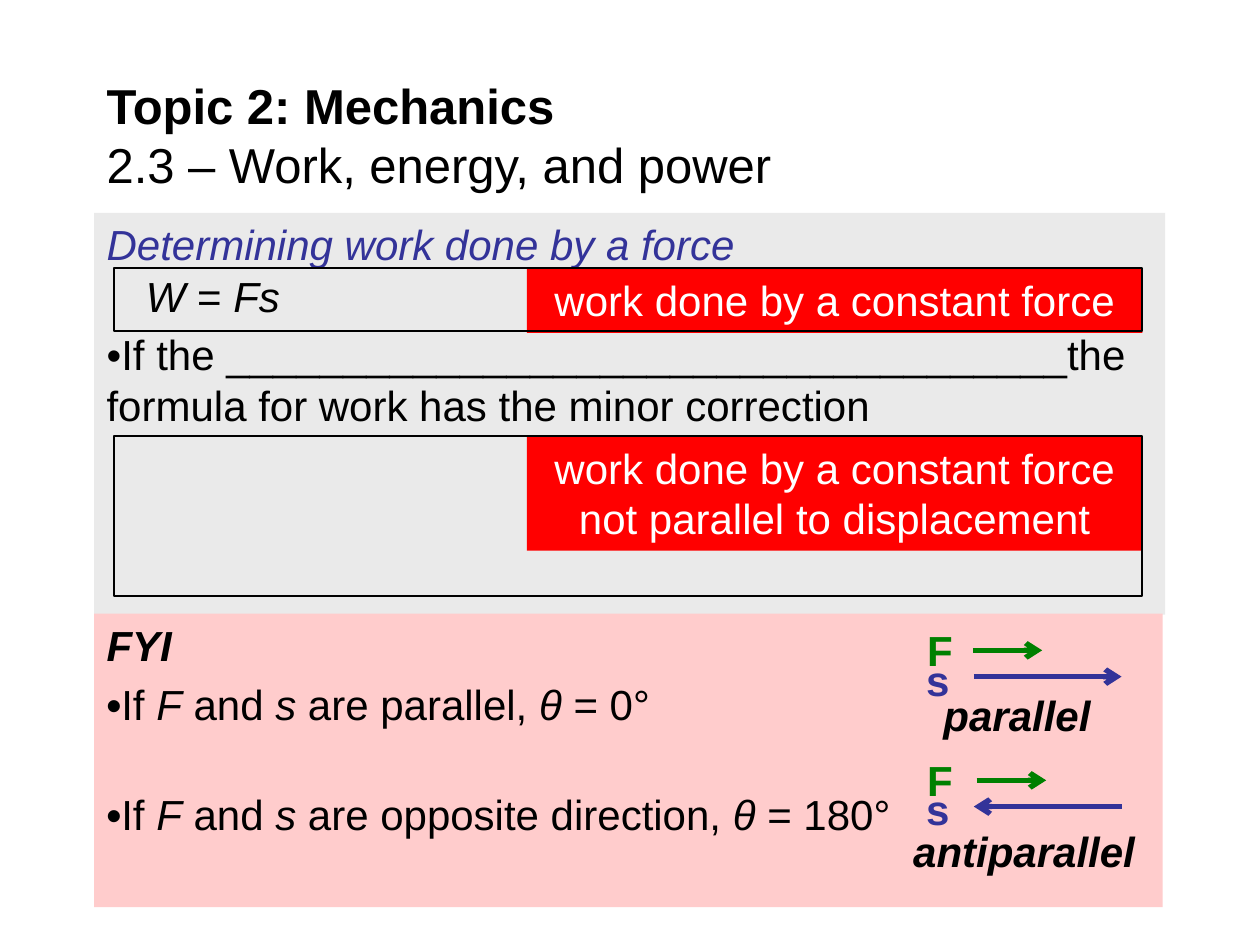
"""Build a physics slide on the work done by a constant force."""
from dataclasses import dataclass
from lxml.etree import SubElement
from pptx import Presentation
from pptx.dml.color import RGBColor as Rgb
from pptx.enum.shapes import MSO_CONNECTOR as Link, MSO_SHAPE as Preset
from pptx.enum.text import MSO_ANCHOR as Anchor, PP_ALIGN as Align
from pptx.oxml.ns import qn
from pptx.util import Cm, Pt


@dataclass(frozen=True)
class Theme:
    font: str = "Arial"
    title: int = 28
    body: int = 24
    gap: int = 5
    wide_gap: int = 34
    black: str = "000000"
    white: str = "FFFFFF"
    blue: str = "333399"
    green: str = "008000"
    red: str = "FF0000"
    gray: str = "EAEAEA"
    pink: str = "FFCCCC"


theme = Theme()

TITLE = [
    dict(spans=[("Topic 2: Mechanics", "b")], size=theme.title),
    dict(spans=[("2.3 – Work, energy, and power", "")], size=theme.title),
]
LESSON = [
    dict(spans=[("Determining work done by a force", "i")], color=theme.blue),
    dict(spans=[("•If the ____________________________________the formula for work "
                 "has the minor correction", "")], before=theme.wide_gap),
]
FYI = [
    dict(spans=[("FYI", "bi")]),
    dict(spans=[("•", "b"), ("If ", ""), ("F", "i"), (" and ", ""), ("s", "i"),
                (" are parallel, ", ""), ("θ", "i"), (" = 0°", "")], before=theme.gap),
    dict(spans=[("•", "b"), ("If ", ""), ("F", "i"), (" and ", ""), ("s", "i"),
                (" are opposite direction, ", ""), ("θ", "i"), (" = 180°", "")],
         before=theme.wide_gap),
]
FORMULA = [dict(spans=[("W", "i"), (" = ", ""), ("Fs", "i")], spacing=0.9)]
FORMULA_BOXES = [
    ("work done by a constant force not parallel to displacement", 8.79, 2.31, 3.23),
    ("work done by a constant force", 5.41, 1.3, 1.27),
]
FRAME_LEFT, LABEL_LEFT, FRAME_RIGHT = 2.3, 10.62, 23.03
DIAGRAMS = [
    dict(top=12.47, force_x=19.61, reverse=False, caption=("parallel", 18.77, 13.77, 3.51)),
    dict(top=15.09, force_x=19.69, reverse=True, caption=("antiparallel", 18.16, 16.51, 5.03)),
]


def write(box, paras, wrap=True, anchor=Anchor.TOP):
    frame = box.text_frame
    frame.word_wrap = wrap
    frame.vertical_anchor = anchor
    for index, item in enumerate(paras):
        para = frame.add_paragraph() if index else frame.paragraphs[0]
        para.alignment = item.get("align", Align.LEFT)
        para.space_before = Pt(item.get("before", 0))
        para.line_spacing = item.get("spacing", 1.0)
        para.font.name = theme.font
        para.font.size = Pt(item.get("size", theme.body))
        para.font.color.rgb = Rgb.from_string(item.get("color", theme.black))
        spans = item["spans"]
        for text, style in spans:
            span = para.add_run()
            span.text = text
            font = para.font if len(spans) == 1 else span.font
            font.bold = "b" in style
            font.italic = "i" in style


def add_text(page, place, paras, **options):
    write(page.shapes.add_textbox(*map(Cm, place)), paras, **options)


def add_panel(page, place, fill=None, line=None, paras=()):
    box = page.shapes.add_shape(Preset.RECTANGLE, *map(Cm, place))
    box.shadow.inherit = False
    if fill:
        box.fill.solid()
        box.fill.fore_color.rgb = Rgb.from_string(fill)
    else:
        box.fill.background()
    if line:
        box.line.color.rgb = Rgb.from_string(line)
        box.line.width = Pt(1)
    else:
        box.line.fill.background()
    write(box, paras)


def add_arrow(page, start, end, y, color):
    arrow = page.shapes.add_connector(Link.STRAIGHT, Cm(start), Cm(y), Cm(end), Cm(y))
    arrow.line.color.rgb = Rgb.from_string(color)
    arrow.line.width = Pt(3)
    SubElement(arrow.line._get_or_add_ln(), qn("a:tailEnd"), type="arrow")
    SubElement(arrow._element.spPr, qn("a:effectLst"))


def add_label(page, text, left, top, width, color, style):
    add_text(page, (left, top, width, 1.3),
             [dict(spans=[(text, style)], color=color)], wrap=False)


def add_diagram(page, top, force_x, reverse, caption):
    add_arrow(page, force_x, force_x + 1.4, top + 0.64, theme.green)
    ends = (22.61, 19.63) if reverse else (19.63, 22.61)
    add_arrow(page, *ends, top + 1.17, theme.blue)
    add_label(page, "F", 18.44, top, 1.04, theme.green, "b")
    add_label(page, "s", 18.42, top + 0.59, 0.99, theme.blue, "b")
    add_label(page, *caption, theme.black, "bi")


def main():
    deck = Presentation()
    deck.slide_width, deck.slide_height = Cm(25.4), Cm(19.05)
    page = deck.slides.add_slide(deck.slide_layouts[6])
    add_panel(page, (1.9, 4.29, 21.59, 8.1), theme.gray, paras=LESSON)
    add_text(page, (1.9, 1.47, 21.59, 2.49), TITLE, anchor=Anchor.MIDDLE)
    for text, top, label_height, frame_height in FORMULA_BOXES:
        label = dict(spans=[(text, "")], color=theme.white, align=Align.CENTER)
        add_panel(page, (LABEL_LEFT, top, FRAME_RIGHT - LABEL_LEFT, label_height),
                  theme.red, paras=[label])
        add_panel(page, (FRAME_LEFT, top, FRAME_RIGHT - FRAME_LEFT, frame_height),
                  line=theme.black)
    add_text(page, (2.69, 5.44, 3.78, 0.89), FORMULA)
    add_panel(page, (1.9, 12.37, 21.54, 5.92), theme.pink, paras=FYI)
    for diagram in DIAGRAMS:
        add_diagram(page, **diagram)
    deck.save("out.pptx")


if __name__ == "__main__":
    main()
